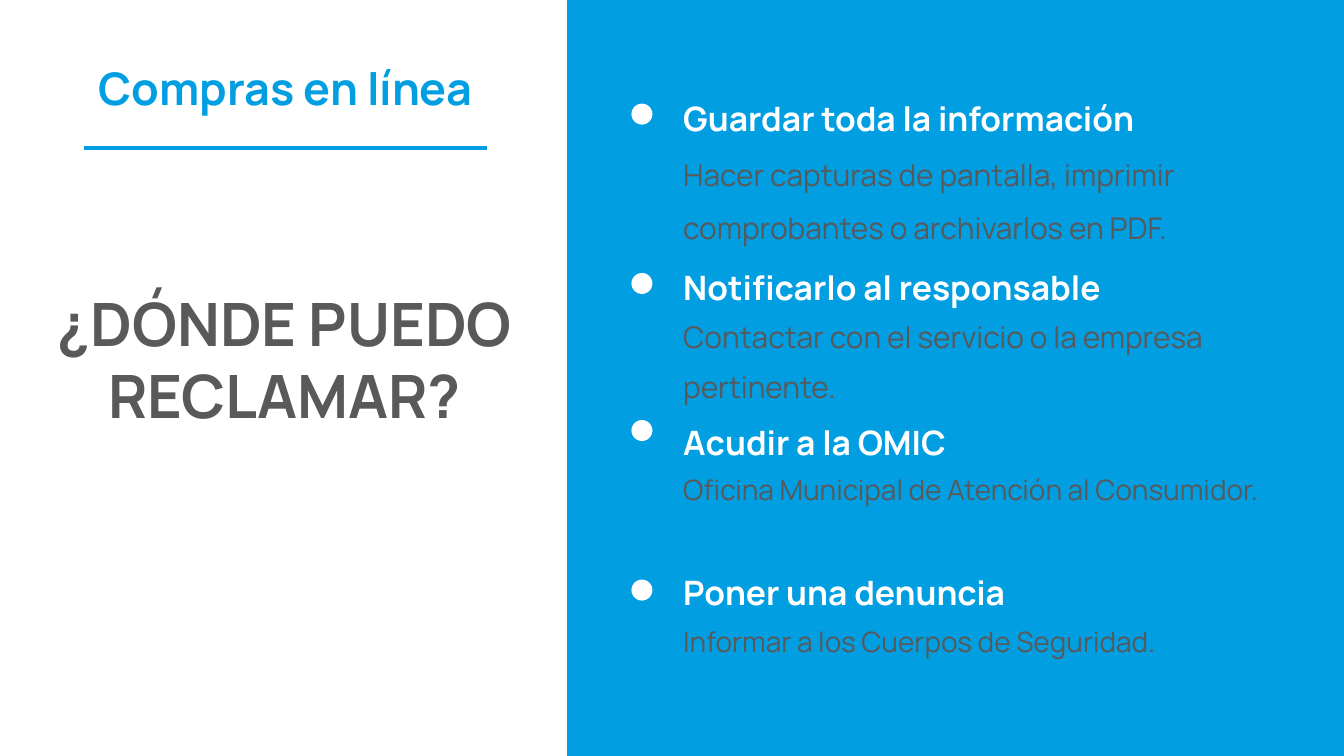
from pptx import Presentation
from pptx.dml.color import RGBColor
from pptx.enum.shapes import MSO_CONNECTOR as Connector, MSO_SHAPE as Shape
from pptx.enum.text import MSO_ANCHOR as Anchor, MSO_AUTO_SIZE as AutoSize, PP_ALIGN as Align
from pptx.oxml.ns import qn
from pptx.util import Emu, Pt
from lxml.etree import SubElement

PX = 9525  # EMU in one px, 96 px to the inch
WIDTH, HEIGHT = 960, 540
FONT = "Manrope"
COLORS = {"blue": "019EE2", "white": "FFFFFF", "grey": "595959", "ground": "231F1D"}

# heading, its top, detail, its top, width, size and line spacing, top of the dot
STEPS = [
    ("Guardar toda la información", 59,
     "Hacer capturas de pantalla, imprimir comprobantes o archivarlos en PDF.",
     99, 423, 16, 1.5, 74),
    ("Notificarlo al responsable", 180,
     "Contactar con el servicio o la empresa pertinente.",
     217, 390, 16, 1.41, 195),
    ("Acudir a la OMIC", 291,
     "Oficina Municipal de Atención al Consumidor.",
     325, 423, 15, 1.51, 300),
    ("Poner una denuncia", 398,
     "Informar a los Cuerpos de Seguridad.",
     434, 428, 15, 1.51, 414),
]


def px(value):
    return Emu(value * PX)


def color(name):
    return RGBColor.from_string(COLORS[name])


def add_solid(page, kind, left, top, width, height, fill):
    shape = page.shapes.add_shape(kind, px(left), px(top), px(width), px(height))
    shape.shadow.inherit = False
    shape.fill.solid()
    shape.fill.fore_color.rgb = color(fill)
    shape.line.fill.background()


def write(box, text, size, ink, bold=False, align=Align.LEFT, spacing=1.0):
    frame = box.text_frame
    frame.text = text
    frame.word_wrap = True
    frame.auto_size = AutoSize.NONE
    frame.vertical_anchor = Anchor.TOP
    frame.margin_left = frame.margin_right = frame.margin_top = frame.margin_bottom = 0
    para = frame.paragraphs[0]
    para.alignment = align
    para.line_spacing = spacing
    font = para.runs[0].font
    font.name, font.size, font.bold = FONT, Pt(size), bold
    font.color.rgb = color(ink)


def add_text(page, left, top, width, height, *args, **style):
    box = page.shapes.add_textbox(px(left), px(top), px(width), px(height))
    write(box, *args, **style)


def add_topic_panel(page, left, top, width, height):
    """White panel with the topic, its underline and the slide's question."""
    add_solid(page, Shape.RECTANGLE, left, top, width, height, "white")
    add_text(page, left - 32, top + 43, 472, 38, "Compras en línea", 24, "blue",
             bold=True, align=Align.CENTER)
    rule = page.shapes.add_connector(Connector.STRAIGHT, px(left + 60), px(top + 106),
                                     px(left + 348), px(top + 106))
    rule.line.color.rgb = color("blue")
    rule.line.width = Pt(2.25)
    SubElement(rule._element.spPr, qn("a:effectLst"))

    title = page.shapes.title
    title.left, title.top = px(left + 41), px(top + 205)
    title.width, title.height = px(325), px(156)
    write(title, "¿DÓNDE PUEDO RECLAMAR?", 32, "grey", bold=True, align=Align.CENTER)
    # The placeholder comes first on the page, so lift it above the panel
    page.shapes._spTree.append(title._element)


def add_steps_panel(page, left, top, width, height):
    add_solid(page, Shape.RECTANGLE, left, top, width, height, "blue")
    for heading, heading_top, detail, detail_top, detail_width, size, spacing, dot_top in STEPS:
        add_solid(page, Shape.OVAL, left + 47, top + dot_top, 15, 15, "white")
        add_text(page, left + 84, top + heading_top, 390, 31, heading, 18, "white",
                 bold=True, spacing=1.37)
        add_text(page, left + 84, top + detail_top, detail_width, 28 if size == 15 else 61,
                 detail, size, "grey", spacing=spacing)


def main():
    deck = Presentation()
    deck.slide_width, deck.slide_height = px(WIDTH), px(HEIGHT)
    page = deck.slides.add_slide(deck.slide_layouts[5])
    page.background.fill.solid()
    page.background.fill.fore_color.rgb = color("ground")
    add_steps_panel(page, 404, 0, WIDTH - 404, HEIGHT)
    add_topic_panel(page, 0, 0, 405, HEIGHT)
    deck.save("out.pptx")


if __name__ == "__main__":
    main()
